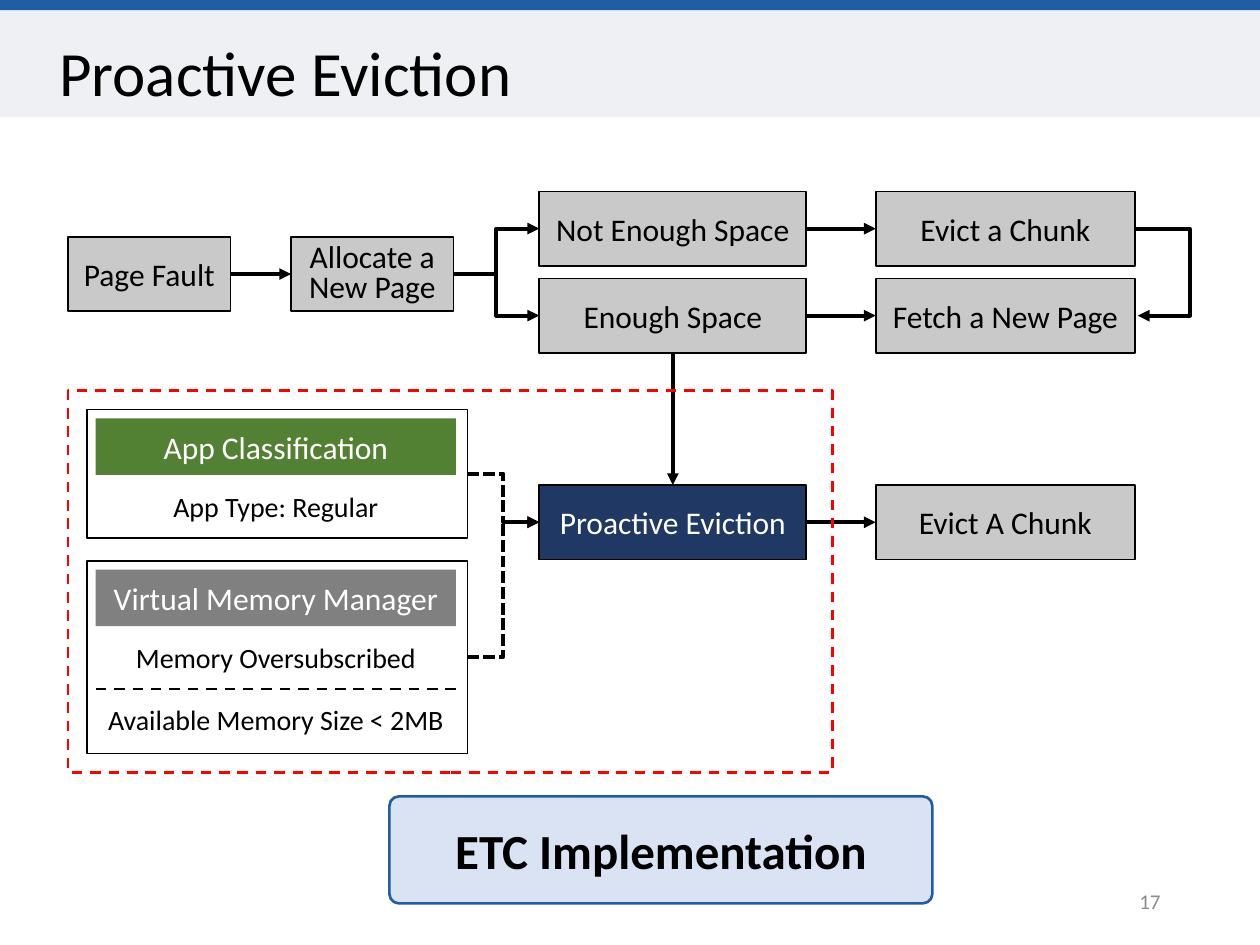
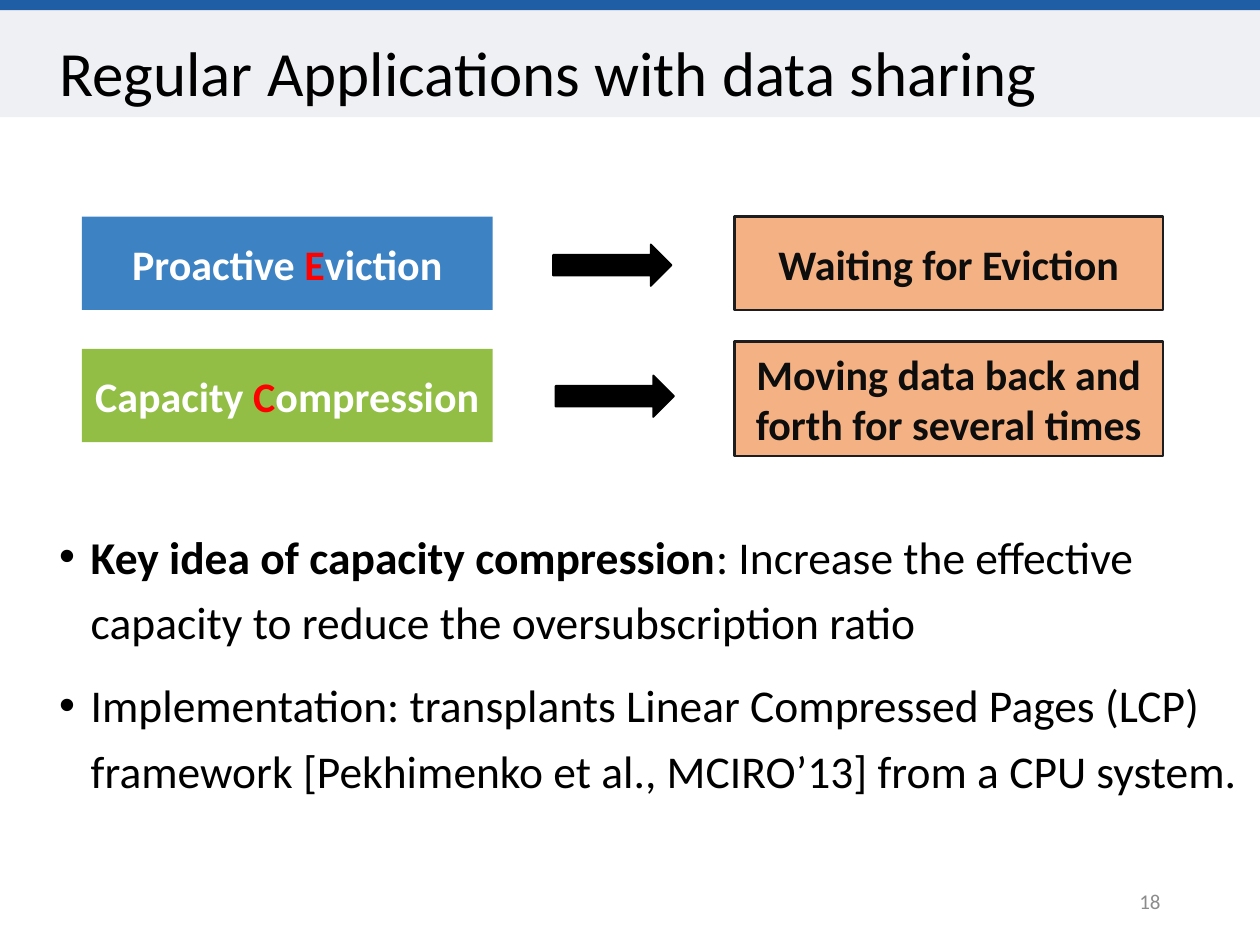
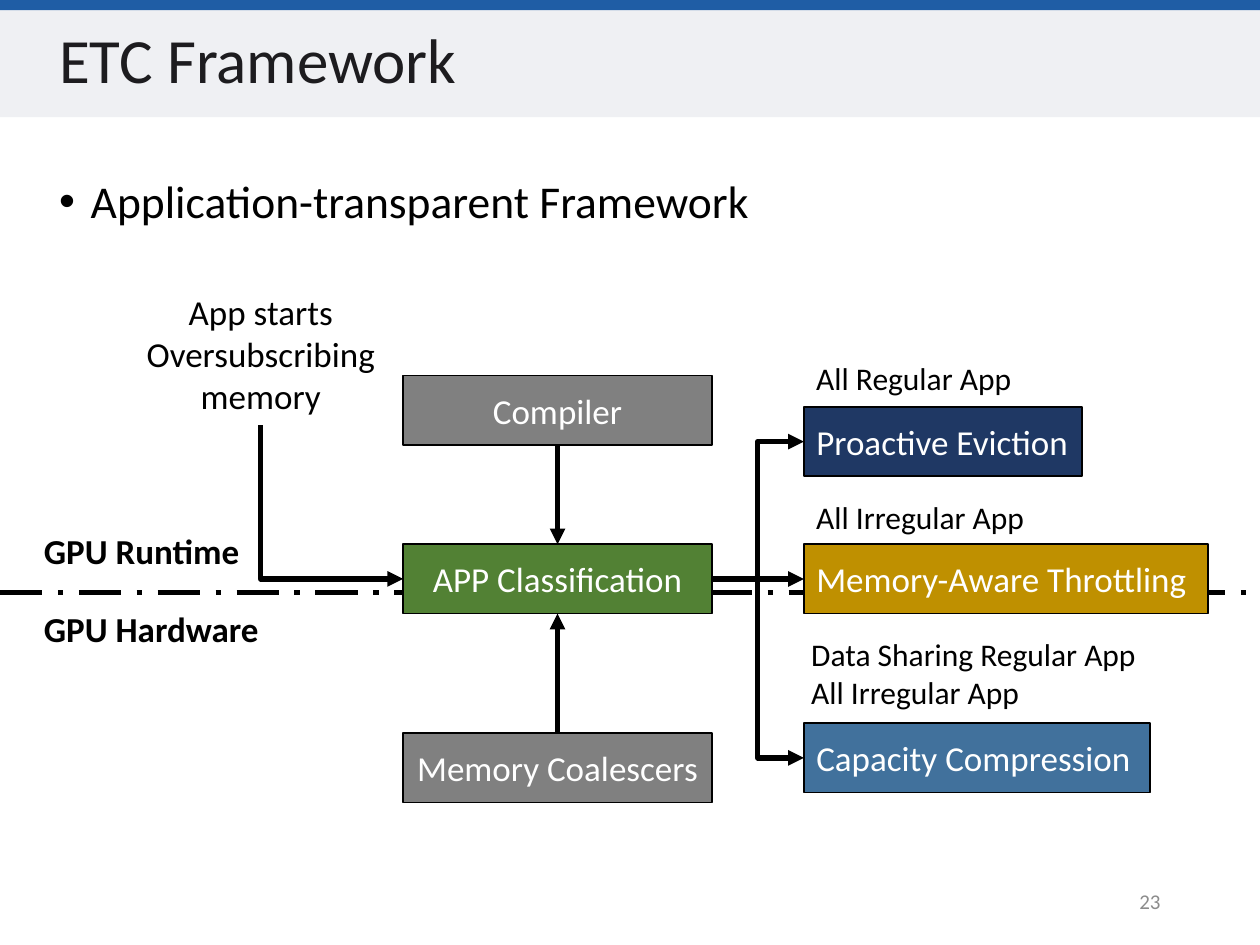
"""Build three slides on proactive eviction, capacity compression and the ETC framework."""
from dataclasses import dataclass

from lxml import etree
from pptx import Presentation
from pptx import util as u
from pptx.dml.color import RGBColor
from pptx.enum import dml, shapes, text
from pptx.oxml.ns import qn


@dataclass(frozen=True)
class Theme:
    font: str = "Calibri"
    black: str = "000000"
    white: str = "FFFFFF"
    ink: str = "1D1C1F"
    soft_black: str = "0D0D0D"
    red: str = "FF0000"
    band: str = "EFF0F3"
    stripe: str = "1F5DA5"
    callout: str = "DAE3F3"
    step: str = "C9C9C9"
    gray: str = "808080"
    page: str = "8C8C8C"
    navy: str = "1F3864"
    green: str = "528134"
    gold: str = "BF9000"
    steel: str = "41719C"
    blue: str = "3D83C4"
    lime: str = "92BE46"
    peach: str = "F4B183"
    title: int = 36
    banner: int = 28
    body: int = 26
    claim: int = 24
    node: int = 20
    label: int = 18
    detail: int = 16
    footer: int = 12


theme = Theme()
RECT = shapes.MSO_SHAPE.RECTANGLE
STRAIGHT, ELBOW = shapes.MSO_CONNECTOR.STRAIGHT, shapes.MSO_CONNECTOR.ELBOW
LEFT, CENTER, RIGHT = text.PP_ALIGN.LEFT, text.PP_ALIGN.CENTER, text.PP_ALIGN.RIGHT
TOP, MIDDLE = text.MSO_ANCHOR.TOP, text.MSO_ANCHOR.MIDDLE
DASH = dml.MSO_LINE.DASH


def write(slide, words, at, holder=None, form=RECT, fill=None, line=None, weight=1, dash=None,
          size=theme.label, color=theme.black, bold=False, accent=None, align=CENTER,
          anchor=MIDDLE, spacing=None, before=None, indent=None):
    """Place text in a placeholder, a shape or (form=None) a text box; |bars| mark accents."""
    place = [u.Inches(length) for length in at]
    if holder is not None:
        part = holder
        part.left, part.top, part.width, part.height = place
    elif form is None:
        part = slide.shapes.add_textbox(*place)
    else:
        part = slide.shapes.add_shape(form, *place)
        part.shadow.inherit = False
        part.fill.background()
        part.line.fill.background()
    if fill:
        part.fill.solid()
        part.fill.fore_color.rgb = RGBColor.from_string(fill)
    if line:
        part.line.color.rgb = RGBColor.from_string(line)
        part.line.width = u.Pt(weight)
        part.line.dash_style = dash
    frame = part.text_frame
    frame.word_wrap, frame.auto_size, frame.vertical_anchor = True, text.MSO_AUTO_SIZE.NONE, anchor
    frame.margin_left = frame.margin_right = u.Inches(0.05 if align == CENTER else 0.1)
    for row, sentence in enumerate(words.split("\n") if words else []):
        paragraph = frame.add_paragraph() if row else frame.paragraphs[0]
        paragraph.alignment = align
        paragraph.line_spacing = spacing
        paragraph.space_before = None if before is None else u.Pt(before)
        if indent:
            properties = paragraph._p.get_or_add_pPr()
            properties.set("marL", str(u.Inches(indent)))
            properties.set("indent", str(-u.Inches(indent)))
        for position, piece in enumerate(sentence.split("|")):
            if piece:
                style = {"color": color, "bold": bold, **(accent if position % 2 else {})}
                run = paragraph.add_run()
                run.text = piece
                run.font.name, run.font.size, run.font.bold = theme.font, u.Pt(size), style["bold"]
                run.font.color.rgb = RGBColor.from_string(style["color"])
    return part


def connect(slide, start=None, finish=None, ends=(0, 0, 0, 0), kind=STRAIGHT, weight=2.25,
            dash=None, arrow="tailEnd"):
    """Draw a line between points, or between (shape, side) pairs."""
    link = slide.shapes.add_connector(kind, *[u.Inches(length) for length in ends])
    if start:
        link.begin_connect(*start)
    if finish:
        link.end_connect(*finish)
    link.line.color.rgb = RGBColor.from_string(theme.black)
    link.line.width = u.Pt(weight)
    link.line.dash_style = dash
    outline = link._element.spPr
    if arrow:
        etree.SubElement(outline.find(qn("a:ln")), qn(f"a:{arrow}"), type="triangle")
    etree.SubElement(outline, qn("a:effectLst"))
    return link


deck = Presentation()
deck.slide_width, deck.slide_height = u.Inches(10), u.Inches(7.5)
margin, band_top, band_height = 0.37, 0.08, 0.85

pages = []
for heading, number, heading_color, spacing in [
    ("Proactive Eviction", "17", theme.black, 1.2),
    ("Regular Applications with data sharing", "18", theme.black, 1.2),
    ("ETC Framework", "23", theme.ink, 0.9),
]:
    page = deck.slides.add_slide(deck.slide_layouts[1])
    for top, height, tint in [(0, band_top, theme.stripe), (band_top, band_height, theme.band)]:
        strip = write(page, "", (0, top, 10, height), fill=tint)
        page.shapes._spTree.insert(2, strip._element)
    write(page, heading, (margin, band_top, 9.34, band_height), holder=page.shapes.title,
          size=theme.title, color=heading_color, align=LEFT, spacing=spacing)
    write(page, number, (7.06, 6.95, 2.25, 0.4), form=None, size=theme.footer,
          color=theme.page, align=RIGHT)
    pages.append(page)
eviction, sharing, framework = pages

unused_body = eviction.placeholders[1]._element
unused_body.getparent().remove(unused_body)
write(eviction, "ETC Implementation", (3.09, 6.32, 4.31, 0.85),
      form=shapes.MSO_SHAPE.ROUNDED_RECTANGLE, fill=theme.callout, line=theme.stripe, weight=1.5,
      size=theme.banner, bold=True).adjustments[0] = 0.09

fault_x, allocate_x, space_x, chunk_x = 0.54, 2.31, 4.28, 6.95
short, medium, long = 1.29, 2.06, 2.12
full_y, start_y, free_y, proactive_y, step_height = 1.52, 1.88, 2.21, 3.85, 0.59
steps = {}
for name, x, y, width, tint, color, spacing in [
    ("Page Fault", fault_x, start_y, short, theme.step, theme.black, None),
    ("Allocate a\nNew Page", allocate_x, start_y, short, theme.step, theme.black, 0.8),
    ("Not Enough Space", space_x, full_y, long, theme.step, theme.black, None),
    ("Enough Space", space_x, free_y, long, theme.step, theme.black, None),
    ("Evict a Chunk", chunk_x, full_y, medium, theme.step, theme.black, None),
    ("Fetch a New Page", chunk_x, free_y, medium, theme.step, theme.black, None),
    ("Proactive Eviction", space_x, proactive_y, long, theme.navy, theme.white, None),
    ("Evict A Chunk", chunk_x, proactive_y, medium, theme.step, theme.black, None),
]:
    steps[name] = write(eviction, name, (x, y, width, step_height), fill=tint,
                        line=theme.black, color=color, spacing=spacing)
fault, allocate, full, free, evict, fetch, proactive, evict_early = steps.values()
for before, after in [(fault, allocate), (full, evict), (free, fetch), (proactive, evict_early)]:
    connect(eviction, (before, 3), (after, 1))
for outcome in (full, free):
    connect(eviction, (allocate, 3), (outcome, 1), kind=ELBOW)
connect(eviction, (free, 2), (proactive, 0))

loop_x = chunk_x + medium
loop = connect(eviction, kind=ELBOW, ends=(loop_x, full_y + step_height / 2,
                                           loop_x + 0.02, free_y + step_height / 2))
bend = loop._element.spPr.find(qn("a:prstGeom")).get_or_add_avLst()
etree.SubElement(bend, qn("a:gd"), name="adj1", fmla="val 2150000")

panel_x, panel_width, header_x, header_width = 0.69, 3.02, 0.76, 2.86
for name, tint, panel_y, panel_height, details in [
    ("App Classification", theme.green, 3.25, 1.02, ["App Type: Regular"]),
    ("Virtual Memory Manager", theme.gray, 4.45, 1.53,
     ["Memory Oversubscribed", "Available Memory Size < 2MB"]),
]:
    panel = write(eviction, "", (panel_x, panel_y, panel_width, panel_height), line=theme.black)
    write(eviction, name, (header_x, panel_y + 0.07, header_width, 0.45), fill=tint,
          color=theme.white)
    for row, detail in enumerate(details):
        detail_y = panel_y + 0.58 + row * 0.49
        write(eviction, detail, (header_x, detail_y, header_width, 0.37), form=None,
              size=theme.detail)
        if row:
            connect(eviction, ends=(header_x, detail_y - 0.05, header_x + header_width,
                                    detail_y - 0.05), weight=1.5, dash=DASH, arrow=None)
    connect(eviction, (panel, 3), (proactive, 1), kind=ELBOW, dash=dml.MSO_LINE.SQUARE_DOT)
write(eviction, "", (fault_x, 3.1, 6.07, 3.03), line=theme.red, weight=1.5, dash=DASH)

write(sharing, "|Key idea of capacity compression|: Increase the effective capacity to reduce "
      "the oversubscription ratio\nImplementation: transplants Linear Compressed Pages (LCP) "
      "framework [Pekhimenko et al., MCIRO’13] from a CPU system.",
      (margin, 4.06, 10 - margin, 3.12), holder=sharing.placeholders[1], size=theme.body,
      accent={"bold": True}, align=LEFT, anchor=TOP, spacing=1.2, before=10, indent=0.25)
for technique, tint, y, arrow_x, arrow_y, problem, problem_y, problem_height in [
    ("Proactive |E|viction", theme.blue, 1.72, 4.39, 1.94, "Waiting for Eviction", 1.72, 0.74),
    ("Capacity |C|ompression", theme.lime, 2.77, 4.41, 2.98,
     "Moving data back and forth for several times", 2.71, 0.91),
]:
    write(sharing, technique, (0.65, y, 3.26, 0.74), fill=tint, size=theme.claim,
          color=theme.white, bold=True, accent={"color": theme.red})
    write(sharing, "", (arrow_x, arrow_y, 0.94, 0.33), form=shapes.MSO_SHAPE.RIGHT_ARROW,
          fill=theme.black, line=theme.black)
    write(sharing, problem, (5.83, problem_y, 3.4, problem_height), fill=theme.peach,
          line=theme.ink, weight=1.5, size=theme.claim, color=theme.soft_black, bold=True)

connect(framework, ends=(0, 4.7, 10, 4.7), weight=3, dash=dml.MSO_LINE.LONG_DASH_DOT, arrow=None)
write(framework, "Application-transparent Framework", (margin, 1.24, 9.19, 0.77),
      holder=framework.placeholders[1], size=theme.body, align=LEFT, anchor=TOP, spacing=1.2,
      before=10, indent=0.25)
source_x, source_width, policy_x, node_height = 3.2, 2.45, 6.38, 0.55
compiler, classification, coalescers = [
    write(framework, name, (source_x, y, source_width, node_height), fill=tint,
          line=theme.black, size=theme.node, color=theme.white)
    for name, y, tint in [("Compiler", 2.98, theme.gray),
                          ("APP Classification", 4.32, theme.green),
                          ("Memory Coalescers", 5.82, theme.gray)]
]
for policy, y, width, tint, audience, audience_x, audience_y, audience_height, kind in [
    ("Proactive Eviction", 3.23, 2.21, theme.navy, "All Regular App", policy_x, 2.8, 0.4, ELBOW),
    ("Memory-Aware Throttling", 4.32, 3.21, theme.gold, "All Irregular App", policy_x, 3.9, 0.4,
     STRAIGHT),
    ("Capacity Compression", 5.74, 2.75, theme.steel,
     "Data Sharing Regular App\nAll Irregular App", 6.34, 4.99, 0.71, ELBOW),
]:
    target = write(framework, policy, (policy_x, y, width, node_height), fill=tint,
                   line=theme.black, size=theme.node, color=theme.white, align=LEFT)
    write(framework, audience, (audience_x, audience_y, 3.2, audience_height), form=None,
          align=LEFT, anchor=TOP)
    connect(framework, (classification, 3), (target, 1), kind=kind, weight=3)

trigger = write(framework, "App starts\nOversubscribing\nmemory", (1, 2.26, 2.14, 1.11),
                form=None, size=theme.node, anchor=TOP)
corner = connect(framework, (classification, 1), (trigger, 2), kind=ELBOW, weight=3,
                 arrow="headEnd")
corner._element.spPr.find(qn("a:prstGeom")).set("prst", "bentConnector2")
for layer, y in [("GPU Runtime", 4.15), ("GPU Hardware", 4.77)]:
    write(framework, layer, (0.25, y, 2, 0.44), form=None, size=theme.node, bold=True,
          align=LEFT, anchor=TOP)
connect(framework, (compiler, 2), (classification, 0), weight=3)
connect(framework, (coalescers, 0), (classification, 2), weight=3)

deck.save("out.pptx")
